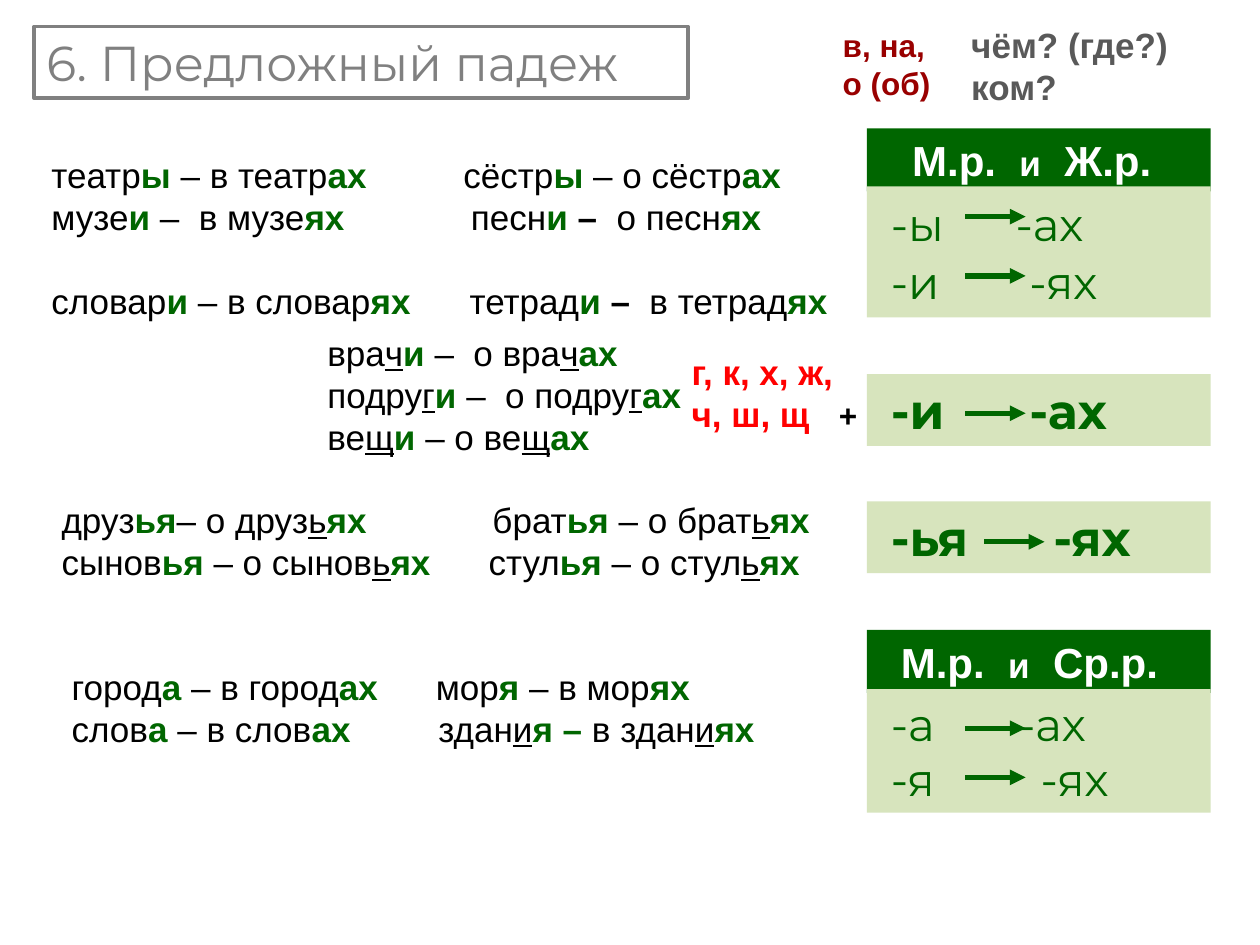
from dataclasses import dataclass
from typing import Iterator, Optional

from lxml.etree import SubElement
from pptx import Presentation
from pptx.dml.color import RGBColor
from pptx.enum.shapes import MSO_CONNECTOR, MSO_SHAPE
from pptx.enum.text import MSO_ANCHOR, PP_ALIGN
from pptx.oxml.ns import qn
from pptx.util import Inches, Pt

GREEN = RGBColor(0x00, 0x66, 0x00)
PALE = RGBColor(0xD7, 0xE4, 0xBD)
WHITE = RGBColor(0xFF, 0xFF, 0xFF)
BLACK = RGBColor(0x00, 0x00, 0x00)
GRAY = RGBColor(0x80, 0x80, 0x80)
DARK_GRAY = RGBColor(0x59, 0x59, 0x59)
MAROON = RGBColor(0x99, 0x00, 0x00)
RED = RGBColor(0xFF, 0x00, 0x00)

PANEL_LEFT, PANEL_WIDTH = 6.88, 2.73
ARROW_LEFT, ARROW_LENGTH = 7.66, 0.48
ENDING, STEM, STRONG = "*", "_", "^"


@dataclass
class Style:
    size: float
    color: RGBColor
    name: str = "Arial"
    bold: bool = False


@dataclass
class Line:
    text: str
    tab: Optional[float] = None
    before: float = 0


@dataclass
class Block:
    left: float
    top: float
    width: float
    height: float
    style: Style
    lines: list[Line]
    wrap: bool = True


@dataclass
class Panel:
    top: float
    height: float
    style: Style
    lines: list[Line]
    arrows: list[float]
    arrow_left: float = ARROW_LEFT


@dataclass
class Header:
    top: float
    indent: float
    genders: tuple[str, str]


EXAMPLE = Style(20, BLACK)
RULE = Style(26, GREEN, "Montserrat")
STRONG_RULE = Style(28, GREEN, "Montserrat", True)

BLOCKS = [
    Block(6.59, 0.16, 0.93, 0.71, Style(18, MAROON, bold=True),
          [Line("в, на,"), Line("о (об)")]),
    Block(7.61, 0.14, 1.78, 0.77, Style(20, DARK_GRAY, bold=True),
          [Line("чём? (где?)"), Line("ком?")], False),
    Block(2.5, 2.58, 3.03, 1.11, EXAMPLE,
          [Line("вра_ч_*и* –  о вра_ч_*ах*"),
           Line("подру_г_*и* –  о подру_г_*ах*"),
           Line("ве_щ_*и* – о ве_щ_*ах*")], False),
    Block(0.31, 1.17, 6.56, 1.44, EXAMPLE,
          [Line("театр*ы* – в театр*ах*\tсёстр*ы* – о сёстр*ах*", 3.27),
           Line("музе*и* –  в музе*ях*\tпесн*и* ^–^  о песн*ях*", 3.33),
           Line("словар*и* – в словар*ях*\tтетрад*и* ^–^  в тетрад*ях*", 3.32, 24)]),
    Block(0.39, 3.91, 6.15, 0.77, EXAMPLE,
          [Line("друз*ья*– о друз_ь_*ях*\tбрат*ья* – о брат_ь_*ях*", 3.42),
           Line("сынов*ья* – о сынов_ь_*ях*\tстул*ья* – о стул_ь_*ях*", 3.39)]),
    Block(0.47, 5.23, 5.78, 0.77, EXAMPLE,
          [Line("город*а* – в город*ах*\tмор*я* – в мор*ях*", 2.89),
           Line("слов*а* – в слов*ах*\tздан_и_*я –* в здан_и_*ях*", 2.91)]),
]

HEADERS = [Header(1.02, 0.36, ("М.р.", "Ж.р.")), Header(5, 0.27, ("М.р.", "Ср.р."))]

PANELS = [
    Panel(1.48, 1.04, RULE, [Line("-ы\t-ах", 0.99), Line("-и\t-ях", 1.1, 2)], [1.72, 2.19]),
    Panel(2.97, 0.57, STRONG_RULE, [Line("-и\t-ах", 1.1)], [3.28]),
    Panel(3.98, 0.57, STRONG_RULE, [Line("-ья\t-ях", 1.29)], [4.3], 7.81),
    Panel(5.47, 0.98, RULE, [Line("-а\t-ах", 1.01), Line("-я\t-ях", 1.19)], [5.78, 6.17]),
]


def split_marks(text: str) -> Iterator[tuple[str, str]]:
    mark, piece = "", ""
    for char in text:
        if char in (ENDING, STEM, STRONG):
            if piece:
                yield mark, piece
            mark, piece = ("" if mark == char else char), ""
        else:
            piece += char
    if piece:
        yield mark, piece


def set_font(font, style: Style) -> None:
    font.size, font.name, font.bold = Pt(style.size), style.name, style.bold
    font.color.rgb = style.color


def write_lines(tf, lines: list[Line], style: Style) -> None:
    for i, line in enumerate(lines):
        p = tf.paragraphs[0] if i == 0 else tf.add_paragraph()
        p.alignment = PP_ALIGN.LEFT
        p.space_before = Pt(line.before)
        if line.tab:
            tabs = SubElement(p._p.get_or_add_pPr(), qn("a:tabLst"))
            SubElement(tabs, qn("a:tab"), pos=str(Inches(line.tab)), algn="l")
        set_font(p.font, style)
        for mark, piece in split_marks(line.text):
            r = p.add_run()
            r.text = piece
            if mark == STEM:
                r.font.underline = True
            elif mark:
                r.font.bold = True
            if mark == ENDING:
                r.font.color.rgb = GREEN


def add_block(s, block: Block):
    sp = s.shapes.add_textbox(Inches(block.left), Inches(block.top),
                              Inches(block.width), Inches(block.height))
    sp.text_frame.word_wrap = block.wrap
    write_lines(sp.text_frame, block.lines, block.style)
    return sp


def add_box(s, left: float, top: float, width: float, height: float, fill: RGBColor):
    sp = s.shapes.add_shape(MSO_SHAPE.RECTANGLE, Inches(left), Inches(top),
                            Inches(width), Inches(height))
    sp.shadow.inherit = False
    sp.fill.solid()
    sp.fill.fore_color.rgb = fill
    sp.line.fill.background()
    sp.text_frame.vertical_anchor = MSO_ANCHOR.MIDDLE
    return sp


def add_arrow(s, left: float, y: float) -> None:
    c = s.shapes.add_connector(MSO_CONNECTOR.STRAIGHT, Inches(left), Inches(y),
                               Inches(left + ARROW_LENGTH), Inches(y))
    c.line.color.rgb = GREEN
    c.line.width = Pt(3)
    SubElement(c.line._get_or_add_ln(), qn("a:tailEnd"), type="triangle")
    SubElement(c._element.spPr, qn("a:effectLst"))


def add_header(s, header: Header) -> None:
    sp = add_box(s, PANEL_LEFT, header.top, PANEL_WIDTH, 0.5, GREEN)
    tf = sp.text_frame
    tf.margin_left = Inches(header.indent)
    first, second = header.genders
    write_lines(tf, [Line(f"{first}  ^и^  {second}")], Style(24, WHITE, bold=True))
    tf.paragraphs[0].runs[1].font.size = Pt(20)


def add_panel(s, panel: Panel) -> None:
    sp = add_box(s, PANEL_LEFT, panel.top, PANEL_WIDTH, panel.height, PALE)
    sp.text_frame.margin_left = Inches(0.19)
    write_lines(sp.text_frame, panel.lines, panel.style)
    for y in panel.arrows:
        add_arrow(s, panel.arrow_left, y)


def main() -> None:
    prs = Presentation()
    prs.slide_width, prs.slide_height = Inches(10), Inches(7.5)
    s = prs.slides.add_slide(prs.slide_layouts[6])

    title = add_box(s, 0.27, 0.21, 5.19, 0.57, WHITE)
    title.line.color.rgb = GRAY
    title.line.width = Pt(2)
    write_lines(title.text_frame, [Line("6. Предложный падеж")], Style(28, GRAY, "Montserrat"))

    for header in HEADERS:
        add_header(s, header)
    for panel in PANELS:
        add_panel(s, panel)
    for block in BLOCKS:
        add_block(s, block)

    consonants = add_block(s, Block(5.39, 2.73, 1.72, 0.77, Style(20, RED, bold=True),
                                    [Line("г, к, х, ж,"), Line("ч, ш, щ\t^+^", 1.17)]))
    plus = consonants.text_frame.paragraphs[1].runs[-1]
    plus.font.size = Pt(18)
    plus.font.color.rgb = BLACK

    prs.save("out.pptx")


if __name__ == "__main__":
    main()
